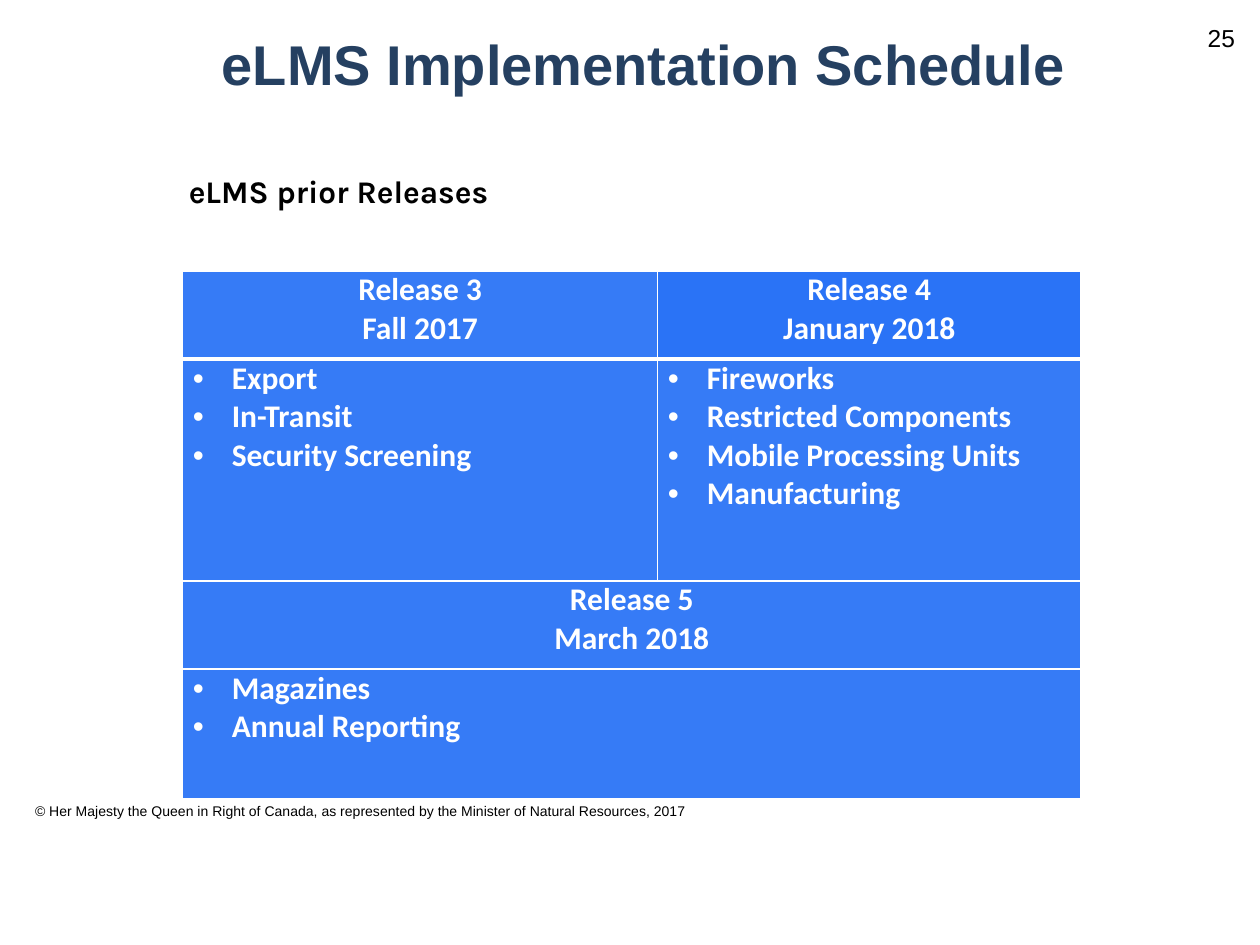
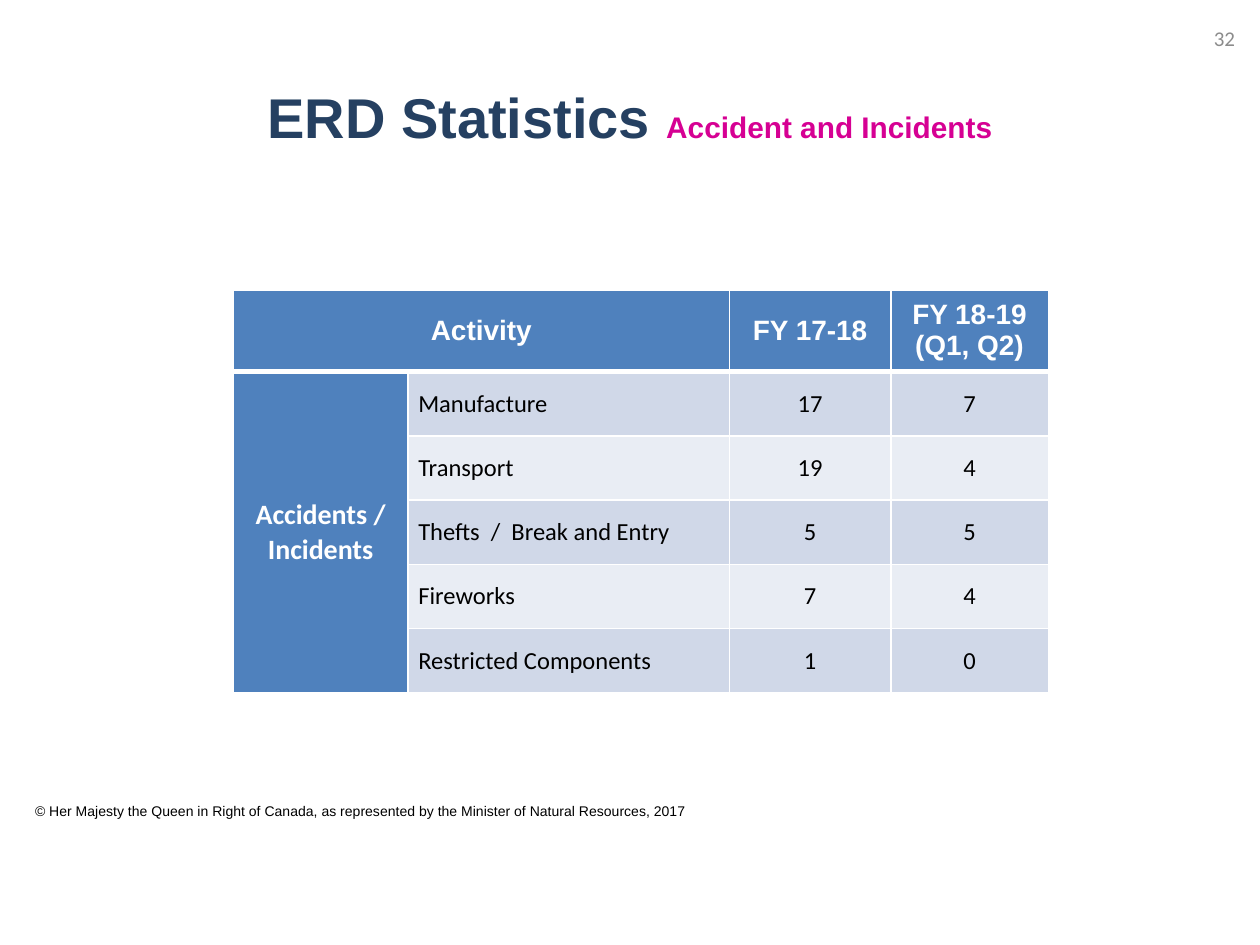
import pptx
import pptx.util
import pptx.dml.color
import pptx.enum.text
import pptx.oxml
import pptx.oxml.ns

Pt = pptx.util.Pt
ALIGN = pptx.enum.text.PP_ALIGN
MIDDLE = pptx.enum.text.MSO_ANCHOR.MIDDLE
TOP = pptx.enum.text.MSO_ANCHOR.TOP
NS = pptx.oxml.ns.nsdecls("a")
C = {
    "navy": "254061", "pink": "D60093", "black": "000000", "white": "FFFFFF",
    "grey": "8C8C8C", "blue": "367BF6", "bright": "2A73F6",
    "steel": "4F81BD", "band1": "D0D8E8", "band2": "E9EDF4",
}
FOOTER = ("© Her Majesty the Queen in Right of Canada, as represented by "
          "the Minister of Natural Resources, 2017")

prs = pptx.Presentation()
prs.slide_width = pptx.util.Inches(10)
prs.slide_height = pptx.util.Inches(7.5)
U = prs.slide_width // 100


def write(tf, lines, font, size, color, bold=False, align=ALIGN.LEFT, bullet=False):
    tf.word_wrap = True
    for i, runs in enumerate(lines):
        p = tf.paragraphs[0] if i == 0 else tf.add_paragraph()
        p.alignment = align
        if bullet:
            pPr = p._p.get_or_add_pPr()
            pPr.set("marL", str(int(3.1 * U)))
            pPr.set("indent", str(int(-3.1 * U)))
            pPr.append(pptx.oxml.parse_xml(f'<a:buFont {NS} typeface="Arial"/>'))
            pPr.append(pptx.oxml.parse_xml(f'<a:buChar {NS} char="•"/>'))
        for text, run_size, run_color in [(runs, size, color)] if isinstance(runs, str) else runs:
            r = p.add_run()
            r.text = text
            r.font.name = font
            r.font.size = Pt(run_size)
            r.font.bold = bold
            r.font.color.rgb = pptx.dml.color.RGBColor.from_string(C[run_color])


def add_grid(s, left, top, cols, rows):
    tbl = s.shapes.add_table(len(rows), len(cols), int(left * U), int(top * U),
                             int(sum(cols) * U), int(sum(rows) * U)).table
    tbl.first_row = tbl.horz_banding = False
    for col, width in zip(tbl.columns, cols):
        col.width = int(width * U)
    for row, height in zip(tbl.rows, rows):
        row.height = int(height * U)
    for y in range(len(rows)):
        for x in range(len(cols)):
            cell = tbl.cell(y, x)
            cell.margin_left = cell.margin_right = int(0.8 * U)
            cell.margin_top = cell.margin_bottom = 0
            heavy = {"B": y == 0, "T": y == 1}
            for side in "LRTB":
                width = Pt(3 if heavy.get(side) else 1)
                cell._tc.get_or_add_tcPr().append(pptx.oxml.parse_xml(
                    f'<a:ln{side} {NS} w="{width}"><a:solidFill>'
                    f'<a:srgbClr val="{C["white"]}"/></a:solidFill></a:ln{side}>'))
            cell.fill.solid()
    return tbl


pages = [
    ((5.6, 1, 91, 8), [("eLMS Implementation Schedule", 32, "navy")],
     ("25", "Arial", 14, "black")),
    ((0, 3, 100, 12.5), [("ERD Statistics ", 32, "navy"),
                         ("Accident and Incidents", 17, "pink")],
     ("32", "Calibri", 12, "grey")),
]
for box, title, (number, font, size, color) in pages:
    s = prs.slides.add_slide(prs.slide_layouts[5])
    sp = s.shapes.title
    sp.left, sp.top, sp.width, sp.height = [int(v * U) for v in box]
    tf = sp.text_frame
    tf.auto_size = pptx.enum.text.MSO_AUTO_SIZE.NONE
    tf.vertical_anchor = MIDDLE
    write(tf, [title], "Arial", 32, "navy", True, ALIGN.CENTER)

    sp = s.shapes.add_textbox(*[int(v * U) for v in (1.8, 63.2, 54.4, 3.7)])
    write(sp.text_frame, [FOOTER], "Arial", 8, "black")

    sp = s.shapes.add_textbox(*[int(v * U) for v in (93.9, 1, 5.1, 4)])
    sp.text_frame.vertical_anchor = MIDDLE
    write(sp.text_frame, [number], font, size, color, align=ALIGN.RIGHT)

schedule, statistics = prs.slides

sp = schedule.shapes.add_textbox(*[int(v * U) for v in (14, 13.2, 39.8, 4)])
write(sp.text_frame, ["eLMS prior Releases"], "Karla", 18, "black", True)

releases = [
    (0, 0, ["Release 3", "Fall 2017"]),
    (0, 1, ["Release 4", "January 2018"]),
    (1, 0, ["Export", "In-Transit", "Security Screening"]),
    (1, 1, ["Fireworks", "Restricted Components", "Mobile Processing Units",
            "Manufacturing"]),
    (2, 0, ["Release 5", "March 2018"]),
    (3, 0, ["Magazines", "Annual Reporting"]),
]
tbl = add_grid(schedule, 14.5, 21.5, [37.7, 33.6], [7, 17.6, 7, 10.3])
for y in (2, 3):
    tbl.cell(y, 0).merge(tbl.cell(y, 1))
for y, x, lines in releases:
    cell = tbl.cell(y, x)
    cell.vertical_anchor = TOP
    fill = "bright" if (y, x) == (0, 1) else "blue"
    cell.fill.fore_color.rgb = pptx.dml.color.RGBColor.from_string(C[fill])
    is_list = y % 2 == 1
    write(cell.text_frame, lines, "Calibri", 18, "white", True,
          ALIGN.LEFT if is_list else ALIGN.CENTER, is_list)

activities = [
    (["Activity"], None, ["FY 17-18"], ["FY 18-19", "(Q1, Q2)"]),
    (["Accidents / Incidents"], ["Manufacture"], ["17"], ["7"]),
    (None, ["Transport"], ["19"], ["4"]),
    (None, ["Thefts  /  Break and Entry"], ["5"], ["5"]),
    (None, ["Fireworks"], ["7"], ["4"]),
    (None, ["Restricted Components"], ["1"], ["0"]),
]
tbl = add_grid(statistics, 18.5, 23, [13.9, 25.5, 12.8, 12.5], [6.5] + [5.1] * 5)
tbl.cell(0, 0).merge(tbl.cell(0, 1))
tbl.cell(1, 0).merge(tbl.cell(5, 0))
for y, row in enumerate(activities):
    for x, lines in enumerate(row):
        cell = tbl.cell(y, x)
        cell.vertical_anchor = MIDDLE
        head = y == 0 or x == 0
        fill = "steel" if head else "band1" if y % 2 else "band2"
        cell.fill.fore_color.rgb = pptx.dml.color.RGBColor.from_string(C[fill])
        if lines:
            write(cell.text_frame, lines, "Arial" if y == 0 else "Calibri",
                  16 if head else 14, "white" if head else "black", head,
                  ALIGN.LEFT if x == 1 else ALIGN.CENTER)

prs.save("out.pptx")
